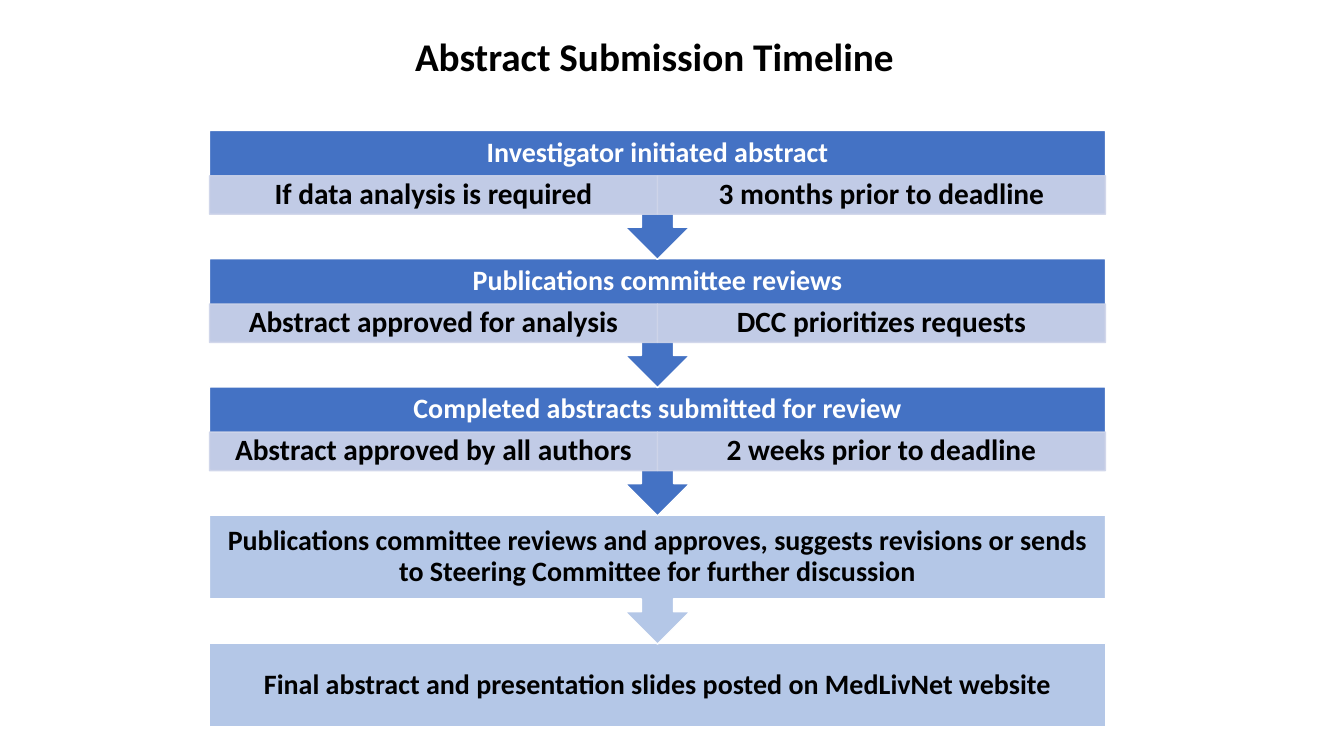
from lxml.etree import SubElement
from pptx import Presentation
from pptx.dml.color import RGBColor
from pptx.enum.shapes import MSO_SHAPE
from pptx.enum.text import MSO_ANCHOR, PP_ALIGN
from pptx.oxml.ns import qn
from pptx.util import Cm, Pt

COLORS = {
    "blue": "4472C4",
    "light": "B4C7E7",
    "pale": "CFD5EA",
    "white": "FFFFFF",
    "black": "000000",
}
STEPS = [
    ("Investigator initiated abstract",
     ["If data analysis is required", "3 months prior to deadline"]),
    ("Publications committee reviews",
     ["Abstract approved for analysis", "DCC prioritizes requests"]),
    ("Completed abstracts submitted for review",
     ["Abstract approved by all authors", "2 weeks prior to deadline"]),
    ("Publications committee reviews and approves, suggests revisions "
     "or sends to Steering Committee for further discussion", []),
    ("Final abstract and presentation slides posted on MedLivNet website", []),
]
BODY = 2.11
CELL = 0.97
PITCH = 3.23
TALL = 3.25


def color(name):
    return RGBColor.from_string(COLORS[name])


def write(shape, text, size=20, tint="black", align=PP_ALIGN.CENTER,
          space=0.9, side=0.4, base=0, wrap=True):
    frame = shape.text_frame
    frame.word_wrap = wrap
    frame.vertical_anchor = MSO_ANCHOR.MIDDLE
    frame.margin_left = frame.margin_right = Cm(side)
    frame.margin_top, frame.margin_bottom = 0, Cm(base)
    para = frame.paragraphs[0]
    para.alignment = align
    para.line_spacing = space
    run = para.add_run()
    run.text = text
    font = run.font
    font.name, font.size, font.bold = "Calibri", Pt(size), True
    font.color.rgb = color(tint)


def block(slide, kind, box, fill, line):
    shape = slide.shapes.add_shape(kind, *[Cm(side) for side in box])
    shape.shadow.inherit = False
    shape.fill.solid()
    shape.fill.fore_color.rgb = color(fill)
    shape.line.color.rgb = color(line)
    shape.line.width = Pt(1)
    return shape


def cells(slide, box, texts):
    left, top, width, height = box
    part = width / len(texts)
    for col, text in enumerate(texts):
        place = (left + col * part, top, part, height)
        cell = block(slide, MSO_SHAPE.RECTANGLE, place, "pale", "pale")
        for paint in cell._element.spPr.iter(qn("a:srgbClr")):
            SubElement(paint, qn("a:alpha"), val="90000")
        write(cell, text, size=21)


def step(slide, box, head, texts, last):
    left, top, width, height = box
    kind = MSO_SHAPE.RECTANGLE if last else MSO_SHAPE.DOWN_ARROW_CALLOUT
    fill, tint = ("blue", "white") if texts else ("light", "black")
    shape = block(slide, kind, box, fill, "white")
    write(shape, head, tint=tint, base=CELL if texts else 0)
    if texts:
        cells(slide, (left, top + BODY - CELL, width, CELL), texts)


def flow(slide, box):
    left, top, width = box
    final = len(STEPS) - 1
    for row, (head, texts) in reversed(list(enumerate(STEPS))):
        last = row == final
        place = (left, top + row * PITCH, width, BODY if last else TALL)
        step(slide, place, head, texts, last)


def title(slide, box):
    shape = slide.shapes.title
    shape.left, shape.top, shape.width, shape.height = [Cm(side) for side in box]
    write(shape, "Abstract Submission Timeline", size=28,
          align=PP_ALIGN.LEFT, space=1, side=0.25, wrap=False)


def main():
    deck = Presentation()
    deck.slide_width, deck.slide_height = Cm(33.87), Cm(19.05)
    slide = deck.slides.add_slide(deck.slide_layouts[5])
    flow(slide, (5.28, 3.29, 22.58))
    title(slide, (10.21, 0.69, 12.7, 1.45))
    deck.save("out.pptx")


if __name__ == "__main__":
    main()
